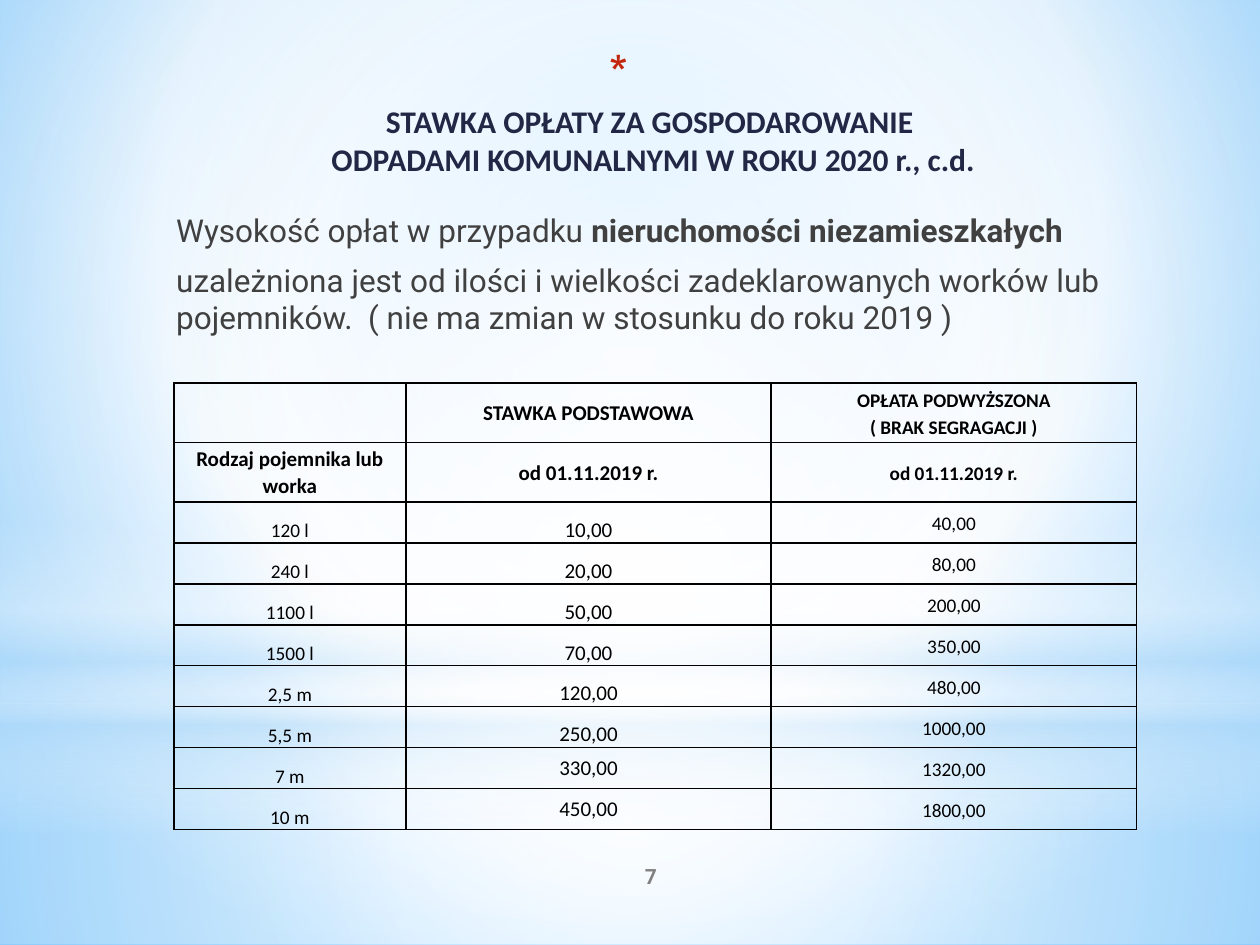
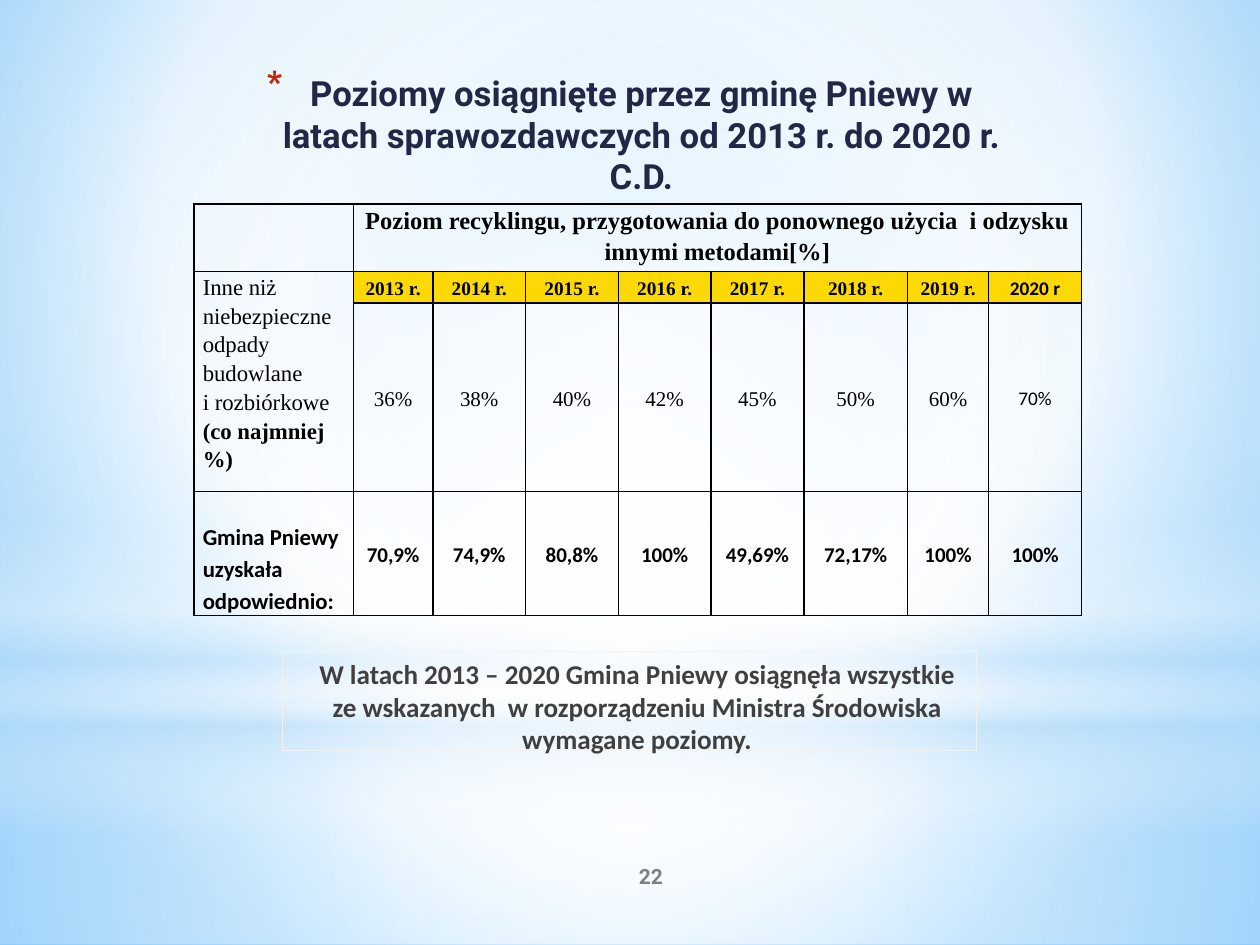
from dataclasses import dataclass, replace
from typing import NamedTuple, Optional

from lxml.etree import SubElement
from pptx import Presentation
from pptx.dml.color import RGBColor
from pptx.enum.shapes import MSO_SHAPE
from pptx.enum.text import MSO_ANCHOR, MSO_AUTO_SIZE, PP_ALIGN
from pptx.oxml.ns import qn
from pptx.util import Pt


@dataclass(frozen=True)
class TextStyle:
    font: str
    size: float
    color: str
    bold: bool = False


@dataclass(frozen=True)
class Theme:
    black: str = "000000"
    navy: str = "212745"
    red: str = "C3260C"
    yellow: str = "FCD904"
    white: str = "FFFFFF"
    mist: str = "B4DCFA"
    frame: str = "F2F2F2"
    title: TextStyle = TextStyle("Roboto", 19.8, "212745", True)
    rates_title: TextStyle = TextStyle("Calibri", 18, "212745", True)
    body: TextStyle = TextStyle("Roboto", 18, "404040")
    conclusion: TextStyle = TextStyle("Calibri", 15.5, "404040", True)
    page_number: TextStyle = TextStyle("Roboto", 12, "808080", True)
    rate: TextStyle = TextStyle("Calibri", 12, "000000")
    small_rate: TextStyle = TextStyle("Calibri", 11, "000000")
    level: TextStyle = TextStyle("Times New Roman", 12, "000000")


class Box(NamedTuple):
    left: float
    top: float
    width: float
    height: float

    def lengths(self) -> list:
        return [Pt(value) for value in self]


class Piece(NamedTuple):
    text: str
    bold: bool


class Stop(NamedTuple):
    position: int
    color: str
    opacity: int = 100


class Backdrop(NamedTuple):
    preset: MSO_SHAPE
    box: Box
    stops: list
    center: Optional[tuple] = (50, 50, 50, 50)


class Cell(NamedTuple):
    row: int
    column: int
    text: str
    style: TextStyle
    anchor: MSO_ANCHOR = MSO_ANCHOR.MIDDLE
    align: PP_ALIGN = PP_ALIGN.CENTER
    fill: Optional[str] = None
    bold_ending: str = ""


class TableLook(NamedTuple):
    side_margin: float
    line_spacing: object


THEME = Theme()
BOLD_RATE = replace(THEME.rate, bold=True)
BOLD_SMALL = replace(THEME.small_rate, bold=True)
WHITE, MIST = THEME.white, THEME.mist

BACKGROUND_STOPS = [Stop(0, "9ED5FF"), Stop(60, WHITE), Stop(100, "5BB9FF")]
BACKDROPS = [
    Backdrop(MSO_SHAPE.RECTANGLE, Box(0, 402, 720, 138),
             [Stop(0, WHITE, 91), Stop(37, WHITE, 76), Stop(100, MIST, 79)]),
    Backdrop(MSO_SHAPE.RECTANGLE, Box(0, 0, 720, 402),
             [Stop(0, WHITE, 89), Stop(48, WHITE, 62), Stop(100, MIST, 79)]),
    Backdrop(MSO_SHAPE.RECTANGLE, Box(0, 297, 720, 180),
             [Stop(0, WHITE, 0), Stop(29, WHITE, 30), Stop(45, MIST, 40),
              Stop(55, WHITE, 26), Stop(65, MIST, 60), Stop(100, WHITE, 0)], None),
    Backdrop(MSO_SHAPE.OVAL, Box(0, 126, 720, 402),
             [Stop(0, WHITE), Stop(56, WHITE, 0)]),
]

RATES = [
    ("120 l", "10,00", "40,00"), ("240 l", "20,00", "80,00"),
    ("1100 l", "50,00", "200,00"), ("1500 l", "70,00", "350,00"),
    ("2,5 m", "120,00", "480,00"), ("5,5 m", "250,00", "1000,00"),
    ("7 m", "330,00", "1320,00"), ("10 m", "450,00", "1800,00"),
]
LEVELS = [
    ("2013 r.", "36%", "70,9%"), ("2014 r.", "38%", "74,9%"),
    ("2015 r.", "40%", "80,8%"), ("2016 r.", "42%", "100%"),
    ("2017 r.", "45%", "49,69%"), ("2018 r.", "50%", "72,17%"),
    ("2019 r.", "60%", "100%"), ("2020 r", "70%", "100%"),
]


def add_color(parent, color: str):
    return SubElement(parent, qn("a:srgbClr"), val=color)


def apply_gradient(fill, element, stops: list, center: Optional[tuple]) -> None:
    """Give the element a radial gradient, or a vertical one without a center."""
    fill.solid()
    solid = next(element.iter(qn("a:solidFill")))
    gradient = SubElement(solid.getparent(), qn("a:gradFill"), rotWithShape="1")
    solid.getparent().replace(solid, gradient)
    stop_list = SubElement(gradient, qn("a:gsLst"))
    for stop in stops:
        entry = SubElement(stop_list, qn("a:gs"), pos=str(stop.position * 1000))
        color = add_color(entry, stop.color)
        if stop.opacity < 100:
            SubElement(color, qn("a:alpha"), val=str(stop.opacity * 1000))
    if center:
        circle = SubElement(gradient, qn("a:path"), path="circle")
        sides = {side: str(share * 1000) for side, share in zip("ltrb", center)}
        SubElement(circle, qn("a:fillToRect"), **sides)
    else:
        SubElement(gradient, qn("a:lin"), ang="5400000", scaled="0")


def build_master(master, slide) -> None:
    """Draw the backdrops on the slide and move them behind the master."""
    apply_gradient(master.background.fill, master.element,
                   BACKGROUND_STOPS, (20, 10, 20, 60))
    for index, backdrop in enumerate(BACKDROPS):
        shape = slide.shapes.add_shape(backdrop.preset, *backdrop.box.lengths())
        apply_gradient(shape.fill, shape.element, backdrop.stops, backdrop.center)
        shape.line.fill.background()
        shape.shadow.inherit = False
        next(shape.element.iter(qn("p:cNvPr"))).set("id", str(20 + index))
        master.shapes.element.insert(2 + index, shape.element)


def format_run(run, style: TextStyle) -> None:
    run.font.name = style.font
    run.font.size = Pt(style.size)
    run.font.bold = style.bold
    run.font.color.rgb = RGBColor.from_string(style.color)


def write(paragraph, pieces: list, style: TextStyle, align: PP_ALIGN) -> None:
    paragraph.text = pieces[0].text
    paragraph.alignment = align
    for run in paragraph.runs:
        format_run(run, replace(style, bold=pieces[0].bold))
    for piece in pieces[1:]:
        run = paragraph.add_run()
        run.text = piece.text
        format_run(run, replace(style, bold=piece.bold))
    for line_break in paragraph._p.iter(qn("a:br")):
        size_break(line_break, style.size, style.font)


def size_break(line_break, size: float, font: str) -> None:
    for child in list(line_break):
        line_break.remove(child)
    properties = SubElement(line_break, qn("a:rPr"), sz=str(round(size * 100)), b="1")
    SubElement(properties, qn("a:latin"), typeface=font)


def indent(paragraph, margin: float, first_line: float = 0):
    properties = paragraph._p.get_or_add_pPr()
    properties.set("marL", str(Pt(margin)))
    properties.set("indent", str(Pt(first_line)))
    return properties


def set_title(slide, text: str, box: Box, style: TextStyle) -> None:
    title = slide.shapes.title
    title.left, title.top, title.width, title.height = box.lengths()
    frame = title.text_frame
    frame.auto_size = MSO_AUTO_SIZE.NONE
    frame.vertical_anchor = MSO_ANCHOR.TOP
    paragraph = frame.paragraphs[0]
    write(paragraph, [Piece(text, style.bold)], style, PP_ALIGN.CENTER)
    properties = indent(paragraph, 25.2, -25.2)
    add_color(SubElement(properties, qn("a:buClr")), THEME.red)
    SubElement(properties, qn("a:buSzPct"), val="128000")
    SubElement(properties, qn("a:buChar"), char="*")


def add_text(slide, box: Box, paragraphs: list, style: TextStyle,
             align: PP_ALIGN = PP_ALIGN.LEFT, margin: float = 0):
    """Add a text box; each paragraph is a list of pieces."""
    shape = slide.shapes.add_textbox(*box.lengths())
    frame = shape.text_frame
    frame.word_wrap = True
    for index, pieces in enumerate(paragraphs):
        paragraph = frame.add_paragraph() if index else frame.paragraphs[0]
        write(paragraph, pieces, style, align)
        paragraph.space_before = Pt(style.size * 0.2)
        paragraph.space_after = Pt(3)
        indent(paragraph, margin)
    return shape


def add_page_number(slide, number: int) -> None:
    shape = slide.shapes.add_textbox(*Box(300, 486, 144, 28.8).lengths())
    shape.text_frame.word_wrap = True
    shape.text_frame.vertical_anchor = MSO_ANCHOR.MIDDLE
    write(shape.text_frame.paragraphs[0], [Piece(str(number), True)],
          THEME.page_number, PP_ALIGN.CENTER)


def add_grid(slide, left: float, top: float, columns: list, rows: list):
    """Add an unfilled table with black borders."""
    box = Box(left, top, sum(columns), sum(rows))
    table = slide.shapes.add_table(len(rows), len(columns), *box.lengths()).table
    table.first_row = table.horz_banding = False
    for column, width in zip(table.columns, columns):
        column.width = Pt(width)
    for row, height in zip(table.rows, rows):
        row.height = Pt(height)
    for cell in table.iter_cells():
        properties = cell._tc.get_or_add_tcPr()
        for side in ("lnL", "lnR", "lnT", "lnB"):
            line = SubElement(properties, qn(f"a:{side}"), w=str(Pt(1)))
            add_color(SubElement(line, qn("a:solidFill")), THEME.black)
        cell.fill.background()
    return table


def fill_cell(table, content: Cell, look: TableLook) -> None:
    cell = table.cell(content.row, content.column)
    cell.margin_left = cell.margin_right = Pt(look.side_margin)
    cell.margin_top = cell.margin_bottom = Pt(0)
    cell.vertical_anchor = content.anchor
    if content.fill:
        cell.fill.solid()
        cell.fill.fore_color.rgb = RGBColor.from_string(content.fill)
    cell.text_frame.text = content.text
    for paragraph in cell.text_frame.paragraphs:
        pieces = [Piece(paragraph.text, content.style.bold)]
        if content.bold_ending:
            pieces.append(Piece(content.bold_ending, True))
        write(paragraph, pieces, content.style, content.align)
        paragraph.line_spacing = look.line_spacing


def build_rates_slide(slide) -> None:
    set_title(slide, "\vSTAWKA OPŁATY ZA GOSPODAROWANIE \v"
              "ODPADAMI KOMUNALNYMI W ROKU 2020 r., c.d.",
              Box(64.8, 28.8, 591.8, 54), THEME.rates_title)
    size_break(next(slide.shapes.title.element.iter(qn("a:br"))), 21.6, "Calibri")
    body = add_text(slide, Box(36.7, 90.7, 648, 400.3), [
        [Piece("Wysokość opłat w przypadku ", False),
         Piece("nieruchomości niezamieszkałych", True)],
        [Piece("uzależniona jest od ilości i wielkości zadeklarowanych worków lub "
               "pojemników.  ( nie ma zmian w stosunku do roku 2019 )", False)],
    ], THEME.body, margin=56.9)
    body.text_frame.margin_top = Pt(30)

    table = add_grid(slide, 99.4, 218.9, [132.5, 208.8, 208.8], [34] * 2 + [23.4] * 8)
    cells = [
        Cell(0, 1, "STAWKA PODSTAWOWA", BOLD_RATE),
        Cell(0, 2, "OPŁATA PODWYŻSZONA\n( BRAK SEGRAGACJI )", BOLD_SMALL),
        Cell(1, 0, "Rodzaj pojemnika lub worka", BOLD_RATE),
        Cell(1, 1, "od 01.11.2019 r.", BOLD_RATE),
        Cell(1, 2, "od 01.11.2019 r.", BOLD_SMALL),
    ]
    for row, (container, basic, raised) in enumerate(RATES, start=2):
        basic_anchor = MSO_ANCHOR.BOTTOM if row < 8 else MSO_ANCHOR.MIDDLE
        cells += [Cell(row, 0, container, THEME.small_rate, MSO_ANCHOR.BOTTOM),
                  Cell(row, 1, basic, THEME.rate, basic_anchor),
                  Cell(row, 2, raised, THEME.small_rate)]
    for content in cells:
        fill_cell(table, content, TableLook(0.72, Pt(15.4)))
    add_page_number(slide, 7)


def build_levels_slide(slide) -> None:
    set_title(slide, "Poziomy osiągnięte przez gminę Pniewy w latach "
              "sprawozdawczych od 2013 r. do 2020 r. C.D.",
              Box(115.9, 37.4, 475.9, 72.7), THEME.title)
    conclusion = add_text(slide, Box(161.3, 372.2, 396.7, 56.9), [[
        Piece("W latach 2013 – 2020 Gmina Pniewy osiągnęła wszystkie ze wskazanych  "
              "w rozporządzeniu Ministra Środowiska wymagane poziomy.", True)]],
        THEME.conclusion, PP_ALIGN.CENTER, margin=8.6)
    conclusion.line.color.rgb = RGBColor.from_string(THEME.frame)
    conclusion.line.width = Pt(0.75)

    table = add_grid(slide, 110.9, 116.6,
                     [91, 45.5, 53, 53, 53, 53, 59.3, 46.4, 53.1], [35.4, 18, 97, 70.9])
    table.cell(0, 1).merge(table.cell(0, 8))
    table.cell(1, 0).merge(table.cell(2, 0))
    cells = [
        Cell(0, 1, "Poziom recyklingu, przygotowania do ponownego użycia  i odzysku "
             "innymi metodami[%]", replace(THEME.level, size=14, bold=True), MSO_ANCHOR.TOP),
        Cell(1, 0, "Inne niż niebezpieczne odpady budowlane \vi rozbiórkowe ",
             replace(THEME.level, size=13), MSO_ANCHOR.TOP, PP_ALIGN.LEFT,
             bold_ending="(co najmniej %)"),
        Cell(3, 0, "Gmina Pniewy uzyskała odpowiednio:", replace(BOLD_RATE, size=13),
             MSO_ANCHOR.BOTTOM, PP_ALIGN.LEFT),
    ]
    for column, (year, required, achieved) in enumerate(LEVELS, start=1):
        is_last = column == len(LEVELS)
        year_style = BOLD_SMALL if is_last else replace(THEME.level, size=11, bold=True)
        cells += [Cell(1, column, year, year_style, fill=THEME.yellow),
                  Cell(2, column, required, THEME.small_rate if is_last else THEME.level),
                  Cell(3, column, achieved, BOLD_RATE)]
    for content in cells:
        fill_cell(table, content, TableLook(5, 1.15))
    add_page_number(slide, 22)


def main() -> None:
    presentation = Presentation()
    presentation.slide_width, presentation.slide_height = Pt(720), Pt(540)
    title_only = presentation.slide_layouts[5]
    rates_slide, levels_slide = (presentation.slides.add_slide(title_only) for _ in range(2))
    build_master(presentation.slide_master, rates_slide)
    build_rates_slide(rates_slide)
    build_levels_slide(levels_slide)
    presentation.save("out.pptx")


if __name__ == "__main__":
    main()
